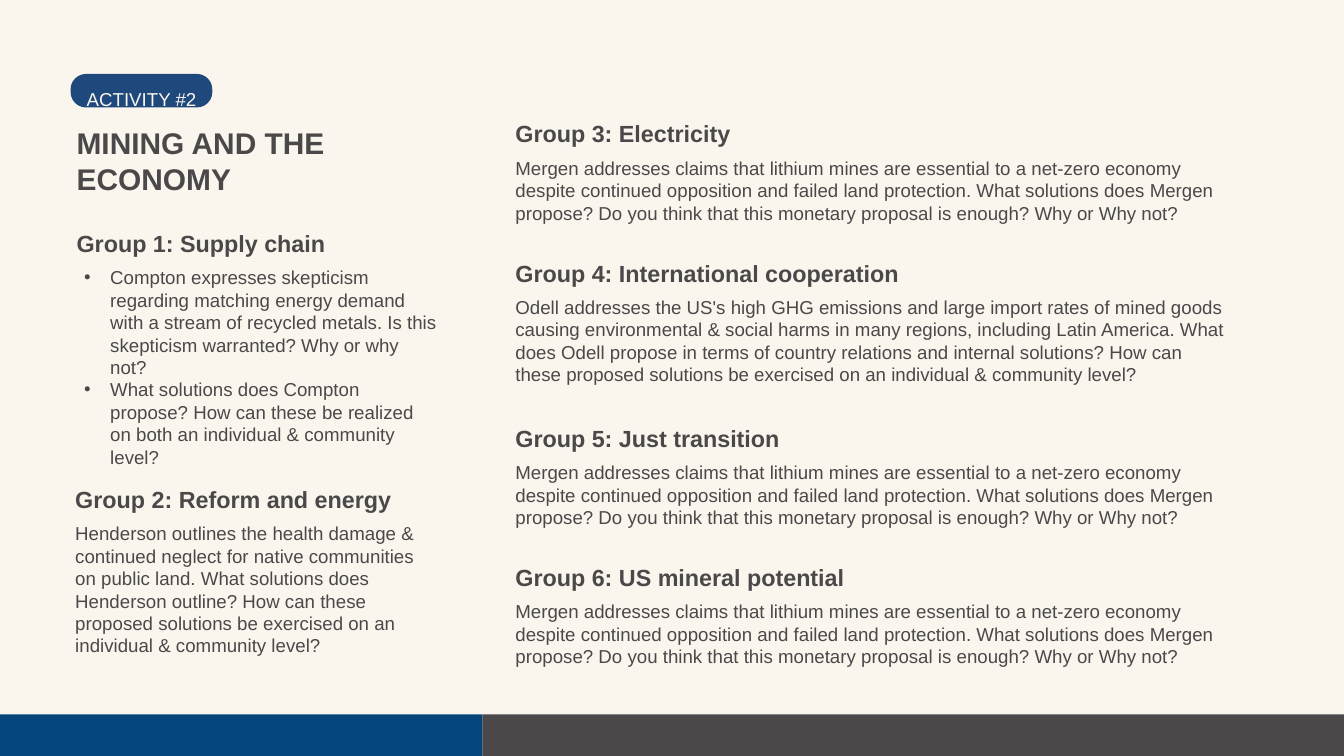
import pptx
import pptx.util
import pptx.dml.color
import pptx.enum.shapes
import pptx.enum.text
import pptx.oxml.ns
from lxml import etree

Inches = pptx.util.Inches
Pt = pptx.util.Pt
SHAPE = pptx.enum.shapes.MSO_SHAPE

COLORS = {
    "paper": "FAF6EE",
    "ink": "4A4849",
    "blue": "04467C",
    "badge": "1F497D",
}
FONT = "Arial"
BODY_OFFSET = 0.55

LITHIUM = (
    "Mergen addresses claims that lithium mines are essential to a net-zero economy "
    "despite continued opposition and failed land protection. What solutions does Mergen "
    "propose? Do you think that this monetary proposal is enough? Why or Why not?"
)
SUPPLY_CHAIN = [
    "Compton expresses skepticism regarding matching energy demand with a stream of "
    "recycled metals. Is this skepticism warranted? Why or why not?",
    "What solutions does Compton propose? How can these be realized on both an "
    "individual & community level?",
]
REFORM = (
    "Henderson outlines the health damage & continued neglect for native communities on "
    "public land. What solutions does Henderson outline? How can these proposed solutions "
    "be exercised on an individual & community level?"
)
COOPERATION = (
    "Odell addresses the US's high GHG emissions and large import rates of mined goods "
    "causing environmental & social harms in many regions, including Latin America. What "
    "does Odell propose in terms of country relations and internal solutions? How can these "
    "proposed solutions be exercised on an individual & community level?"
)
RIGHT_GROUPS = [
    (1.78, "Group 3: Electricity", LITHIUM, 1.01),
    (3.85, "Group 4: International cooperation", COOPERATION, 1.35),
    (6.31, "Group 5: Just transition", LITHIUM, 1.01),
    (8.38, "Group 6: US mineral potential", LITHIUM, 1.01),
]


def rgb(name):
    return pptx.dml.color.RGBColor.from_string(COLORS[name])


def place(sp, x, y, w, h):
    sp.left, sp.top, sp.width, sp.height = (Inches(v) for v in (x, y, w, h))


def set_text(sp, text, size, bold=False, color="ink"):
    tf = sp.text_frame
    tf.text = text
    tf.word_wrap = True
    tf.auto_size = pptx.enum.text.MSO_AUTO_SIZE.NONE
    tf.vertical_anchor = pptx.enum.text.MSO_ANCHOR.TOP
    tf.margin_left = tf.margin_top = tf.margin_right = tf.margin_bottom = 0
    for p in tf.paragraphs:
        p.alignment = pptx.enum.text.PP_ALIGN.LEFT
        p.space_before = Pt(0)
        for r in p.runs:
            r.font.name = FONT
            r.font.size = Pt(size)
            r.font.bold = bold
            r.font.color.rgb = rgb(color)
    return tf


def add_text(slide, x, y, w, h, text, size, bold=False, color="ink"):
    sp = slide.shapes.add_textbox(Inches(x), Inches(y), Inches(w), Inches(h))
    return set_text(sp, text, size, bold, color)


def add_block(slide, kind, x, y, w, h, color):
    sp = slide.shapes.add_shape(kind, Inches(x), Inches(y), Inches(w), Inches(h))
    sp.shadow.inherit = False
    sp.fill.solid()
    sp.fill.fore_color.rgb = rgb(color)
    sp.line.fill.background()
    return sp


def add_bullet(p):
    pPr = p._p.get_or_add_pPr()
    pPr.set("marL", str(Inches(0.5)))
    pPr.set("indent", str(-Inches(0.39)))
    qn = pptx.oxml.ns.qn
    clr = etree.SubElement(pPr, qn("a:buClr"))
    etree.SubElement(clr, qn("a:srgbClr"), val=COLORS["ink"])
    etree.SubElement(pPr, qn("a:buFont"), typeface=FONT)
    etree.SubElement(pPr, qn("a:buChar"), char="•")


def add_heading(slide, x, y, w, text):
    add_text(slide, x, y, w, 0.42, text, 25, bold=True)


def add_group(slide, x, y, w, heading, body, body_height):
    add_heading(slide, x, y, w, heading)
    add_text(slide, x, y + BODY_OFFSET, w, body_height, body, 20)


def add_list_group(slide, x, y, w, heading, items, list_height):
    add_heading(slide, x, y, w, heading)
    body = slide.placeholders[1]
    place(body, x, y + BODY_OFFSET, w, list_height)
    tf = set_text(body, "\n".join(items), 20)
    for p in tf.paragraphs:
        add_bullet(p)


def add_footer(slide, x, y, w, h, split):
    add_block(slide, SHAPE.RECTANGLE, x, y, split, h, "blue")
    add_block(slide, SHAPE.RECTANGLE, x + split, y, w - split, h, "ink")


def add_badge(slide, x, y, w, h, text):
    sp = add_block(slide, SHAPE.ROUNDED_RECTANGLE, x, y, w, h, "badge")
    sp.adjustments[0] = 0.46
    tf = add_text(slide, x + 0.24, y + 0.08, 9.33, 0.34, text, 20, color="paper")
    tf.paragraphs[0].line_spacing = 1.4


def add_title(slide, x, y, w, h, text):
    title = slide.shapes.title
    place(title, x, y, w, h)
    set_text(title, text, 32, bold=True)


def main():
    prs = pptx.Presentation()
    prs.slide_width, prs.slide_height = Inches(20), Inches(11.25)
    slide = prs.slides.add_slide(prs.slide_layouts[1])
    slide.background.fill.solid()
    slide.background.fill.fore_color.rgb = rgb("paper")

    add_footer(slide, 0, 10.63, 20, 0.62, split=7.18)
    add_title(slide, 1.14, 1.85, 4.65, 1.08, "MINING AND THE ECONOMY")
    add_list_group(slide, 1.14, 3.41, 5.39, "Group 1: Supply chain", SUPPLY_CHAIN, 3.03)
    add_group(slide, 1.12, 7.22, 5.4, "Group 2: Reform and energy", REFORM, 2.02)
    for y, heading, body, height in RIGHT_GROUPS:
        add_group(slide, 7.67, y, 10.66, heading, body, height)
    add_badge(slide, 1.05, 1.1, 2.11, 0.5, "ACTIVITY #2")

    prs.save("out.pptx")


if __name__ == "__main__":
    main()
